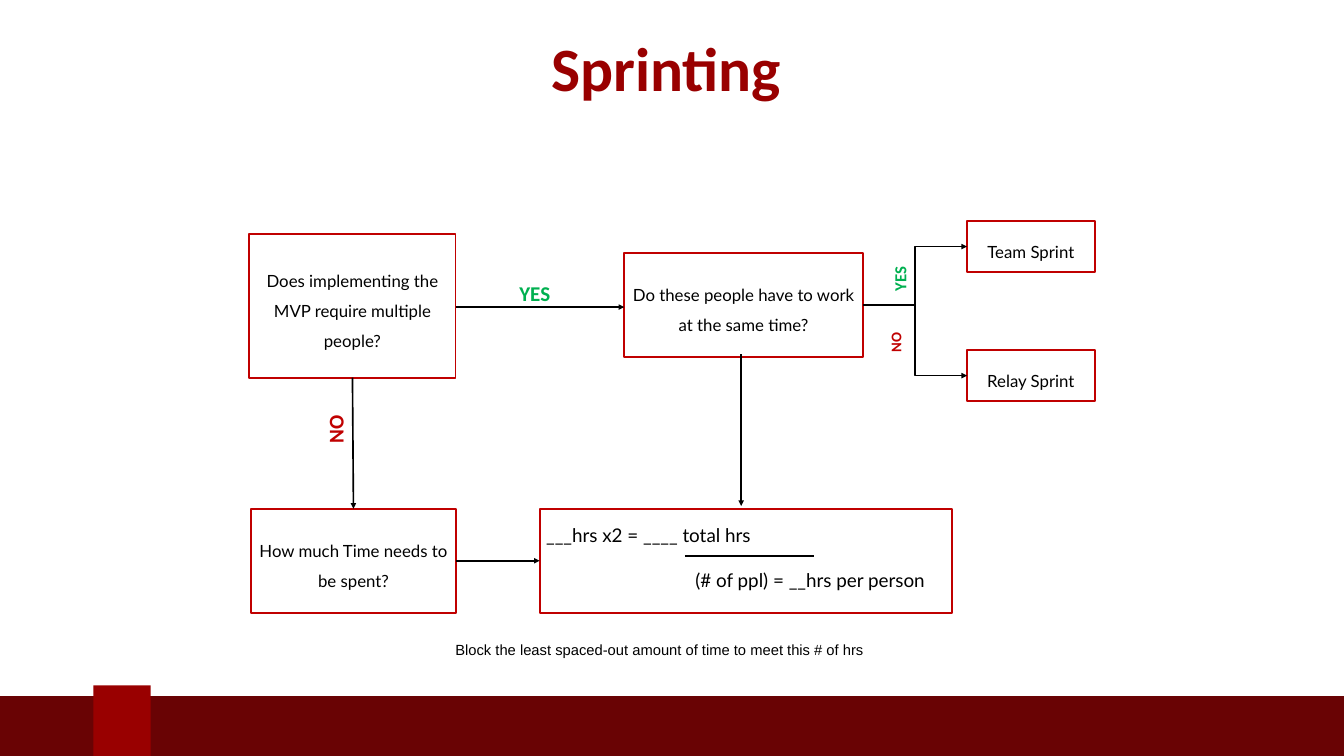
from dataclasses import dataclass

from pptx import Presentation
from pptx.dml.color import RGBColor
from pptx.enum.shapes import MSO_CONNECTOR, MSO_SHAPE
from pptx.enum.text import MSO_ANCHOR, PP_ALIGN
from pptx.oxml.ns import qn
from pptx.util import Inches, Pt
from lxml import etree

RECTANGLE = MSO_SHAPE.RECTANGLE
STRAIGHT, ELBOW = MSO_CONNECTOR.STRAIGHT, MSO_CONNECTOR.ELBOW
LEFT, CENTER = PP_ALIGN.LEFT, PP_ALIGN.CENTER
TOP, MIDDLE = MSO_ANCHOR.TOP, MSO_ANCHOR.MIDDLE
# Connection sites of a rectangle
SITE_TOP, SITE_LEFT, SITE_BOTTOM, SITE_RIGHT = range(4)

# The grid has 20 columns and 11.25 rows, each one inch
COLUMNS, ROWS = 20, 11.25
UNIT = Inches(1)


@dataclass(frozen=True)
class Theme:
    band: str = "690304"
    accent: str = "990000"
    border: str = "C00000"
    yes: str = "00B050"
    no: str = "C00000"
    ink: str = "000000"
    paper: str = "FFFFFF"
    heading_font: str = "Calibri"
    body_font: str = "Lato"
    note_font: str = "Arial"
    title: float = 66
    label: float = 22.5
    side_yes: float = 18
    small: float = 15.8
    body: float = 18
    formula: float = 20.2
    border_width: float = 2
    arrow_width: float = 1.75
    bar_width: float = 2.25


THEME = Theme()


@dataclass(frozen=True)
class Box:
    left: float
    top: float
    width: float
    height: float

    def inner(self, left, top, width, height):
        """A box whose place is counted from this one's corner."""
        return Box(self.left + left, self.top + top, width, height)

    def point(self, column, row):
        return grid(self.left + column, self.top + row)

    def lengths(self):
        return grid(self.left, self.top, self.width, self.height)


def grid(*counts):
    return [round(count * UNIT) for count in counts]


def color(value):
    return RGBColor.from_string(value)


def write(shape, *lines, size=THEME.body, font=THEME.body_font, ink=THEME.ink,
          bold=False, align=LEFT, anchor=TOP, spacing=1.0, gap=0, indents=(),
          inset_top=0.05):
    """Fill a shape with one paragraph per line of text."""
    frame = shape.text_frame
    frame.word_wrap = True
    frame.vertical_anchor = anchor
    frame.margin_top = Inches(inset_top)
    for index, line in enumerate(lines):
        para = frame.add_paragraph() if index else frame.paragraphs[0]
        para.alignment = align
        para.line_spacing = spacing
        if index:
            para.space_before = Pt(gap)
        if indents:
            properties = para._p.get_or_add_pPr()
            properties.set("marL", str(Inches(indents[index])))
        span = para.add_run()
        span.text = line
        span.font.name, span.font.size, span.font.bold = font, Pt(size), bold
        span.font.color.rgb = color(ink)


def add_text(page, box, *lines, rotation=0, **style):
    shape = page.shapes.add_textbox(*box.lengths())
    shape.rotation = rotation
    write(shape, *lines, **style)


def add_block(page, box, fill, border=None):
    shape = page.shapes.add_shape(RECTANGLE, *box.lengths())
    shape.shadow.inherit = False
    shape.fill.solid()
    shape.fill.fore_color.rgb = color(fill)
    if border:
        shape.line.color.rgb = color(border)
        shape.line.width = Pt(THEME.border_width)
    else:
        shape.line.fill.background()
    return shape


def add_node(page, box, *lines, **style):
    shape = add_block(page, box, THEME.paper, THEME.border)
    write(shape, *lines, **style)
    return shape


def add_line(page, start=(0, 0), end=(0, 0), kind=STRAIGHT,
             width=THEME.arrow_width, arrow=True):
    line = page.shapes.add_connector(kind, *start, *end)
    line.line.color.rgb = color(THEME.ink)
    line.line.width = Pt(width)
    properties = line._element.spPr
    if arrow:
        outline = properties.find(qn("a:ln"))
        etree.SubElement(outline, qn("a:tailEnd"), type="triangle")
    etree.SubElement(properties, qn("a:effectLst"))
    return line


def link(page, source, source_site, target, target_site, kind=STRAIGHT):
    line = add_line(page, kind=kind)
    line.begin_connect(source, source_site)
    line.end_connect(target, target_site)


def draw_footer(page, box):
    add_block(page, box.inner(0, 0.16, box.width, 1), THEME.band)
    add_block(page, box.inner(1.46, 0, 0.85, 1.16), THEME.accent)


def draw_title(page, box):
    add_text(page, box, "Sprinting", size=THEME.title, font=THEME.heading_font,
             ink=THEME.accent, bold=True, align=CENTER, anchor=MIDDLE)


def draw_flowchart(page, box):
    # Answers beside the arrows
    for place, answer, ink, size, rotation in (
        ((4.63, 1.12, 1.05, 0.48), "YES", THEME.yes, THEME.label, 0),
        ((9.79, 1.62, 1.08, 0.37), "NO", THEME.no, THEME.small, 270),
        ((9.85, 0.69, 1.08, 0.4), "YES", THEME.yes, THEME.side_yes, 270),
        ((1.45, 2.92, 1.08, 0.48), "NO", THEME.no, THEME.label, 270),
    ):
        add_text(page, box.inner(*place), answer, rotation=rotation, size=size,
                 font=THEME.heading_font, ink=ink, bold=True)

    # Questions and outcomes
    multiple, time, together, team, relay = [
        add_node(page, box.inner(*place), words,
                 align=CENTER, anchor=MIDDLE, spacing=1.5)
        for place, words in (
            ((0.71, 0.48, 3.07, 2.14),
             "Does implementing the MVP require multiple people?"),
            ((0.74, 4.57, 3.04, 1.55), "How much Time needs to be spent?"),
            ((6.29, 0.76, 3.55, 1.55),
             "Do these people have to work at the same time?"),
            ((11.39, 0.29, 1.9, 0.76), "Team Sprint"),
            ((11.39, 2.21, 1.9, 0.76), "Relay Sprint"),
        )
    ]

    # Hours formula with its fraction bar
    formula = add_node(page, box.inner(5.03, 4.57, 6.14, 1.55),
                       "___hrs x2 = ____ total hrs",
                       "(# of ppl) = __hrs per person",
                       size=THEME.formula, gap=24, indents=(0, 2.22),
                       inset_top=0.22)
    add_line(page, box.point(7.19, 5.28), box.point(9.12, 5.28),
             width=THEME.bar_width, arrow=False)

    # Arrows
    link(page, multiple, SITE_BOTTOM, time, SITE_TOP)
    link(page, time, SITE_RIGHT, formula, SITE_LEFT)
    add_line(page, box.point(3.78, 1.57), box.point(6.29, 1.57))
    add_line(page, box.point(8.03, 2.27), box.point(8.03, 4.53))
    for outcome in (team, relay):
        link(page, together, SITE_RIGHT, outcome, SITE_LEFT, ELBOW)


def draw_note(page, box):
    add_text(page, box,
             "Block the least spaced-out amount of time to meet this # of hrs",
             size=THEME.small, font=THEME.note_font, align=CENTER, spacing=1.5)


def main():
    deck = Presentation()
    deck.slide_width, deck.slide_height = grid(COLUMNS, ROWS)
    page = deck.slides.add_slide(deck.slide_layouts[6])
    draw_footer(page, Box(-0.07, 10.2, 20.19, 1.16))
    draw_flowchart(page, Box(3, 3, 14, 6.25))
    draw_note(page, Box(2.88, 9.35, 13.88, 0.45))
    draw_title(page, Box(1.16, 0.23, 17.51, 1.53))
    deck.save("out.pptx")


if __name__ == "__main__":
    main()
